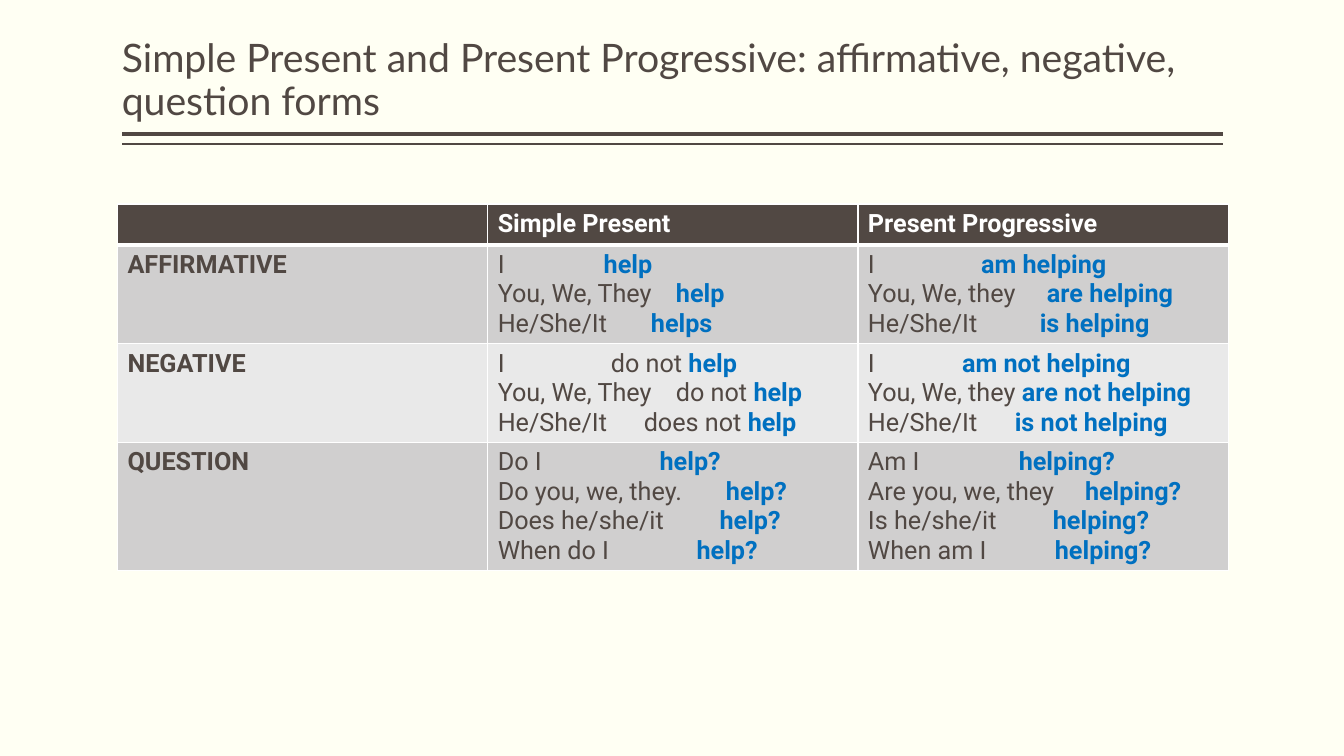
from lxml.etree import SubElement
from pptx import Presentation
from pptx.dml.color import RGBColor
from pptx.enum.shapes import MSO_CONNECTOR as Connector
from pptx.enum.text import MSO_ANCHOR as Anchor, MSO_AUTO_SIZE as AutoSize, PP_ALIGN as Align
from pptx.oxml.ns import qn
from pptx.util import Cm, Pt

BROWN, BLUE, WHITE = "514843", "0070C0", "FFFFFF"
DARK_BAND, LIGHT_BAND, CREAM = "D0CFCF", "E9E9E9", "FFFFF3"

HEADINGS = ["", "Simple Present", "Present Progressive"]
# Each form: label, band, row height, then a list of lines per tense.
# Each line: subject, tab stop in cm (None for a plain space), auxiliary, verb.
FORMS = [
    ("AFFIRMATIVE", DARK_BAND, 2.48,
     [("I", 2.67, "", "help"),
      ("You, We, They", 4.49, "", "help"),
      ("He/She/It", 3.86, "", "helps")],
     [("I", 2.85, "", "am helping"),
      ("You, We, they", 4.51, "", "are helping"),
      ("He/She/It", 4.33, "", "is helping")]),
    ("NEGATIVE", LIGHT_BAND, 2.48,
     [("I", 2.85, "do not ", "help"),
      ("You, We, They", 4.49, "do not ", "help"),
      ("He/She/It", 3.68, "does not ", "help")],
     [("I", 2.37, "", "am not helping"),
      ("You, We, they", None, "", "are not helping"),
      ("He/She/It", 3.7, "", "is not helping")]),
    ("QUESTION", DARK_BAND, 3.22,
     [("Do I", 4.08, "", "help?"),
      ("Do you, we, they.", 5.75, "", "help?"),
      ("Does he/she/it", 5.59, "", "help?"),
      ("When do I", 5.01, "", "help?")],
     [("Am I", 3.8, "", "helping?"),
      ("Are you, we, they", 5.47, "", "helping?"),
      ("Is he/she/it", 4.66, "", "helping?"),
      ("When am I", 4.71, "", "helping?")]),
]


def rgb(code):
    return RGBColor.from_string(code)


def apply(target, values):
    for name, value in values.items():
        setattr(target, name, value)


class GrammarSlide:
    title_font = {"name": "Lato", "size": Pt(28), "bold": False}
    body_font = {"name": "Roboto", "size": Pt(18)}

    def __init__(self, deck):
        self.slide = deck.slides.add_slide(deck.slide_layouts[5])
        fill = self.slide.background.fill
        fill.solid()
        fill.fore_color.rgb = rgb(CREAM)

    def run(self, paragraph, text, color, font):
        run = paragraph.add_run()
        run.text = text
        apply(run.font, font)
        run.font.color.rgb = rgb(color)

    def title(self, text, left, top, width, height):
        heading = self.slide.shapes.title
        apply(heading, {"left": Cm(left), "top": Cm(top),
                        "width": Cm(width), "height": Cm(height)})
        apply(heading.text_frame, {
            "word_wrap": True, "auto_size": AutoSize.NONE,
            "vertical_anchor": Anchor.BOTTOM, "margin_left": 0,
            "margin_right": 0, "margin_top": Cm(0.13), "margin_bottom": Cm(0.13)})
        paragraph = heading.text_frame.paragraphs[0]
        apply(paragraph, {"alignment": Align.LEFT, "line_spacing": 0.9})
        self.run(paragraph, text, BROWN, self.title_font)

    def rule(self, left, right, y, weight):
        rule = self.slide.shapes.add_connector(
            Connector.STRAIGHT, Cm(right), Cm(y), Cm(left), Cm(y))
        rule.line.color.rgb = rgb(BROWN)
        rule.line.width = Pt(weight)
        SubElement(rule._element.spPr, qn("a:effectLst"))

    def table(self, left, top, column_width, heights, columns):
        frame = self.slide.shapes.add_table(
            len(heights), columns, Cm(left), Cm(top),
            Cm(column_width * columns), Cm(sum(heights)))
        for column in frame.table.columns:
            column.width = Cm(column_width)
        for row, height in zip(frame.table.rows, heights):
            row.height = Cm(height)
        return frame.table

    def style_cell(self, cell, color, top=1, bottom=1):
        properties = cell._tc.get_or_add_tcPr()
        for side, weight in {"L": 1, "R": 1, "T": top, "B": bottom}.items():
            border = SubElement(properties, qn(f"a:ln{side}"), w=str(Pt(weight)))
            paint = SubElement(border, qn("a:solidFill"))
            SubElement(paint, qn("a:srgbClr"), val=WHITE)
        cell.fill.solid()
        cell.fill.fore_color.rgb = rgb(color)

    def label(self, cell, text, color):
        if text:
            self.run(cell.text_frame.paragraphs[0], text, color,
                     {**self.body_font, "bold": True})

    def conjugation(self, cell, lines):
        frame = cell.text_frame
        for index, (subject, stop, auxiliary, verb) in enumerate(lines):
            paragraph = frame.add_paragraph() if index else frame.paragraphs[0]
            if stop:
                tabs = SubElement(paragraph._p.get_or_add_pPr(), qn("a:tabLst"))
                SubElement(tabs, qn("a:tab"), pos=str(Cm(stop)), algn="l")
            gap = "\t" if stop else " "
            self.run(paragraph, subject + gap + auxiliary, BROWN,
                     {**self.body_font, "bold": False})
            self.run(paragraph, verb, BLUE, {**self.body_font, "bold": True})


def main():
    deck = Presentation()
    apply(deck, {"slide_width": Cm(33.87), "slide_height": Cm(19.05)})
    page = GrammarSlide(deck)

    # Title and double rule
    page.title("Simple Present and Present Progressive: "
               "affirmative, negative, question forms", 3.07, 0.2, 27.74, 3.05)
    for y, weight in [(3.38, 3), (3.63, 1)]:
        page.rule(3.07, 30.81, y, weight)

    # Heading row
    heights = [1.03] + [form[2] for form in FORMS]
    tenses = page.table(2.96, 5.14, 9.33, heights, len(HEADINGS))
    for column, heading in enumerate(HEADINGS):
        cell = tenses.cell(0, column)
        page.style_cell(cell, BROWN, bottom=3)
        page.label(cell, heading, WHITE)

    # One row per form
    for row, (form, band, _, *conjugations) in enumerate(FORMS, start=1):
        for column in range(len(HEADINGS)):
            page.style_cell(tenses.cell(row, column), band, top=3 if row == 1 else 1)
        page.label(tenses.cell(row, 0), form, BROWN)
        for column, lines in enumerate(conjugations, start=1):
            page.conjugation(tenses.cell(row, column), lines)

    deck.save("out.pptx")


if __name__ == "__main__":
    main()
